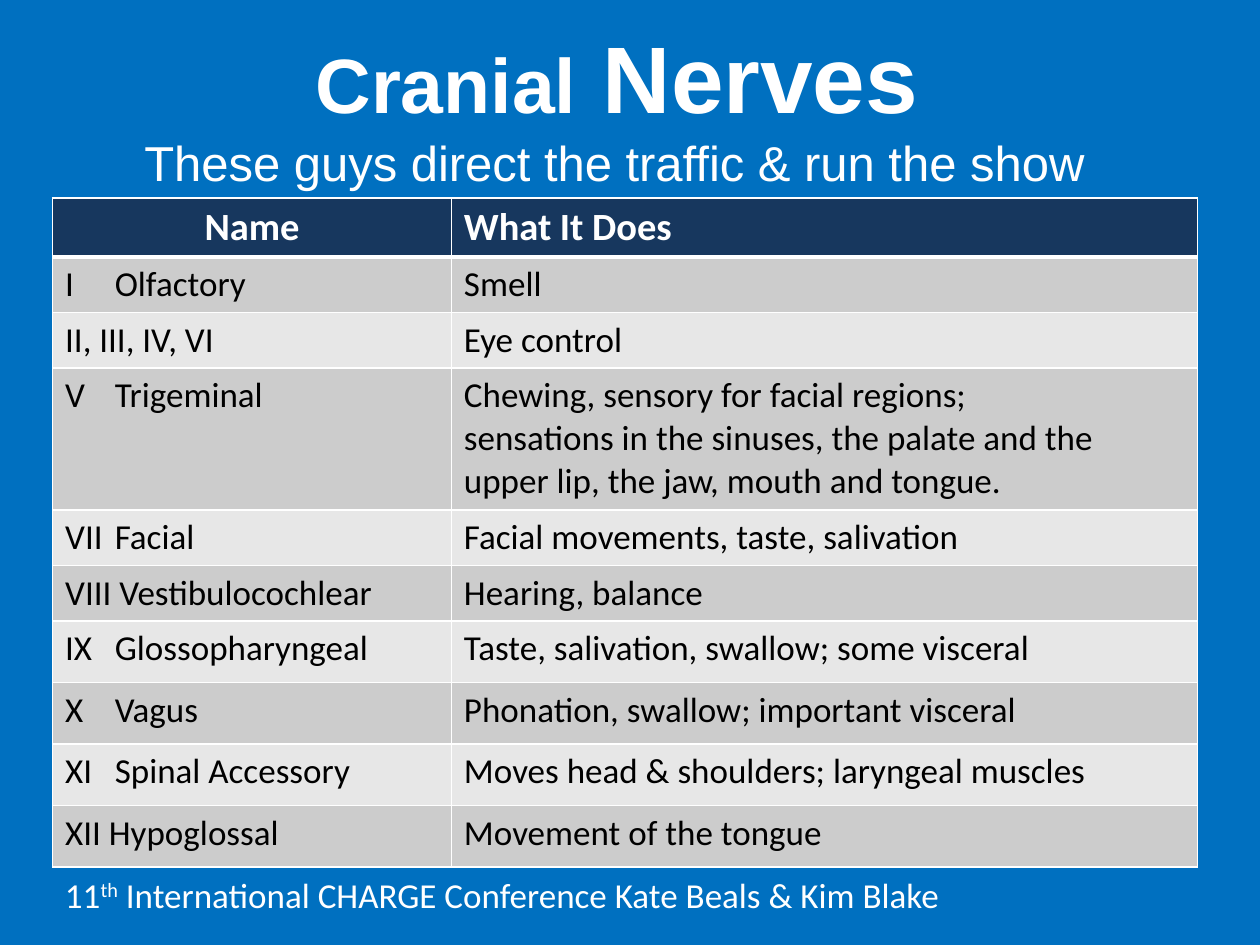
from dataclasses import dataclass

from lxml import etree
from pptx import Presentation
from pptx import util as u
from pptx.dml.color import RGBColor
from pptx.enum import text
from pptx.oxml import ns

WHITE, BLACK = "FFFFFF", "000000"
BLUE, NAVY = "0070C0", "17375E"
BANDS = ("CCCCCC", "E7E7E7")
CENTER = text.PP_ALIGN.CENTER
MIDDLE = text.MSO_ANCHOR.MIDDLE

# Table measures: centimetres, except the rules in points
TABLE_LEFT, TABLE_TOP = 1.06, 3.99
COLUMN_WIDTHS = (8.04, 15.04)
HEADER_HEIGHT, SHORT, MEDIUM, TALL = 1.19, 1.12, 1.24, 2.86
NAME_TAB = 1
THIN, THICK = 1, 3


@dataclass
class Nerve:
    name: str
    action: str
    height: float


NERVES = [
    Nerve("I\tOlfactory", "Smell", SHORT),
    Nerve("II, III, IV, VI", "Eye control", SHORT),
    Nerve("V\tTrigeminal", "Chewing, sensory for facial regions;\n"
          "sensations in the sinuses, the palate and the upper lip, "
          "the jaw, mouth and tongue.", TALL),
    Nerve("VII\tFacial", "Facial movements, taste, salivation", SHORT),
    Nerve("VIII Vestibulocochlear", "Hearing, balance", SHORT),
    Nerve("IX\tGlossopharyngeal", "Taste, salivation, swallow; some visceral", MEDIUM),
    Nerve("X\tVagus", "Phonation, swallow; important visceral", MEDIUM),
    Nerve("XI\tSpinal Accessory", "Moves head & shoulders; laryngeal muscles", MEDIUM),
    Nerve("XII Hypoglossal", "Movement of the tongue", MEDIUM),
]


def color(value: str) -> RGBColor:
    return RGBColor.from_string(value)


def add_span(para, words: str, *, size: float, font: str = "Calibri",
             ink: str = WHITE, bold: bool = False, baseline: int = 0) -> None:
    """Add formatted text; baseline is a raise in percent."""
    span = para.add_run()
    span.text = words
    span.font.size = u.Pt(size)
    span.font.name = font
    span.font.bold = bold
    span.font.color.rgb = color(ink)
    if baseline:
        span._r.get_or_add_rPr().set("baseline", str(baseline * 1000))


def add_box(page, left: float, top: float, width: float, height: float,
            align=None, anchor=text.MSO_ANCHOR.TOP):
    """Add a wrapping text box and return its first paragraph."""
    box = page.shapes.add_textbox(*map(u.Cm, (left, top, width, height)))
    box.text_frame.word_wrap = True
    box.text_frame.vertical_anchor = anchor
    para = box.text_frame.paragraphs[0]
    para.alignment = align
    return para


def add_tab(para, position: float) -> None:
    stops = etree.SubElement(para._p.get_or_add_pPr(), ns.qn("a:tabLst"))
    etree.SubElement(stops, ns.qn("a:tab"), pos=str(u.Cm(position)), algn="l")


def set_borders(cell, top: float, bottom: float) -> None:
    properties = cell._tc.get_or_add_tcPr()
    for side, width in {"L": THIN, "R": THIN, "T": top, "B": bottom}.items():
        line = etree.SubElement(properties, ns.qn(f"a:ln{side}"), w=str(u.Pt(width)))
        paint = etree.SubElement(line, ns.qn("a:solidFill"))
        etree.SubElement(paint, ns.qn("a:srgbClr"), val=WHITE)


def fill_cell(cell, words: str, fill: str, *, align=None, top: float = THIN,
              bottom: float = THIN, **style) -> None:
    """Write one paragraph per line of words; style goes to add_span."""
    set_borders(cell, top, bottom)
    cell.fill.solid()
    cell.fill.fore_color.rgb = color(fill)
    frame = cell.text_frame
    for index, line in enumerate(words.split("\n")):
        para = frame.add_paragraph() if index else frame.paragraphs[0]
        para.alignment = align
        if "\t" in line:
            add_tab(para, NAME_TAB)
        add_span(para, line, **style)


def add_nerve_table(page, nerves: list[Nerve]) -> None:
    heights = [HEADER_HEIGHT] + [nerve.height for nerve in nerves]
    size = (sum(COLUMN_WIDTHS), sum(heights))
    table = page.shapes.add_table(len(heights), len(COLUMN_WIDTHS),
                                  *map(u.Cm, (TABLE_LEFT, TABLE_TOP, *size))).table
    for column, width in zip(table.columns, COLUMN_WIDTHS):
        column.width = u.Cm(width)
    for row, height in zip(table.rows, heights):
        row.height = u.Cm(height)

    # Header, with a thick rule below
    name_head, action_head = table.rows[0].cells
    header_style = dict(bottom=THICK, size=22, bold=True)
    fill_cell(name_head, "Name", NAVY, align=CENTER, **header_style)
    fill_cell(action_head, "What It Does", NAVY, **header_style)

    # Banded rows; the first one shares the header's thick rule
    for index, nerve in enumerate(nerves):
        fill = BANDS[index % len(BANDS)]
        top = THIN if index else THICK
        for cell, words in zip(table.rows[index + 1].cells, (nerve.name, nerve.action)):
            fill_cell(cell, words, fill, top=top, size=20, ink=BLACK)


def main() -> None:
    deck = Presentation()
    deck.slide_width, deck.slide_height = u.Cm(25.4), u.Cm(19.05)
    page = deck.slides.add_slide(deck.slide_layouts[6])
    page.background.fill.solid()
    page.background.fill.fore_color.rgb = color(BLUE)

    # Title
    title = add_box(page, 1.9, -0.07, 21.6, 3.18, CENTER, MIDDLE)
    for words, size in (("Cranial", 44), (" Nerves ", 54)):
        add_span(title, words, size=size, font="Arial", bold=True)

    # Table of nerves
    add_nerve_table(page, NERVES)

    # Subtitle
    subtitle = add_box(page, 1.69, 2.54, 21.39, 1.45, CENTER)
    add_span(subtitle, "These guys direct the traffic & run the show",
             size=28, font="Arial")

    # Conference line
    footer = add_box(page, TABLE_LEFT, 17.48, 21.8, 1.11)
    for words, baseline in (
            ("11", 0), ("th", 30),
            (" International CHARGE Conference Kate Beals & Kim Blake", 0)):
        add_span(footer, words, size=20, baseline=baseline)

    deck.save("out.pptx")


if __name__ == "__main__":
    main()
